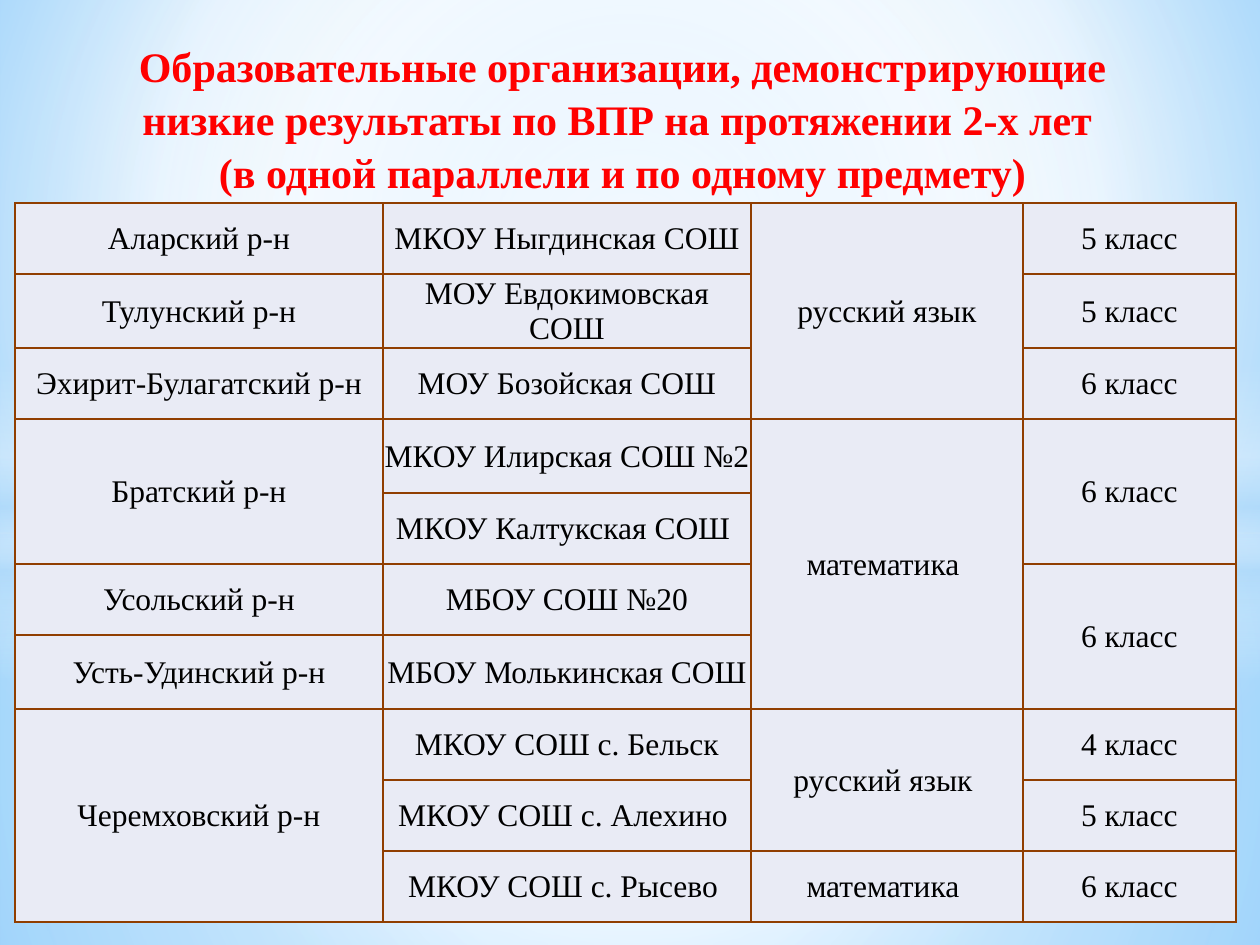
from lxml.etree import SubElement
from pptx import Presentation
from pptx.dml.color import RGBColor
from pptx.enum.shapes import MSO_SHAPE
from pptx.enum.text import MSO_ANCHOR, MSO_AUTO_SIZE, PP_ALIGN
from pptx.oxml.ns import qn
from pptx.util import Pt

PX = 914400 / 126
FONT = "Times New Roman"
RED = RGBColor(0xFF, 0x00, 0x00)
BLACK = RGBColor(0x00, 0x00, 0x00)
WHITE = RGBColor(0xFF, 0xFF, 0xFF)
CELL = RGBColor(0xE9, 0xEB, 0xF5)
BORDER = RGBColor(0x90, 0x3E, 0x00)
SKY = RGBColor(0x9E, 0xD5, 0xFF)
BLUE = RGBColor(0x5B, 0xB9, 0xFF)
PALE = RGBColor(0xB4, 0xDC, 0xFA)

CENTRE = (50, 50, 50, 50)
# Outline, box, stops (position, colour, opacity), focus (None: top to bottom)
GLOWS = [
    (MSO_SHAPE.RECTANGLE, (0, 533, 1260, 412),
     [(0, WHITE, 91), (37, WHITE, 76), (100, PALE, 79)], CENTRE),
    (MSO_SHAPE.RECTANGLE, (0, 0, 1260, 533),
     [(0, WHITE, 89), (48, WHITE, 62), (100, PALE, 79)], CENTRE),
    (MSO_SHAPE.RECTANGLE, (0, 365, 1260, 315),
     [(0, WHITE, 0), (29, WHITE, 30), (45, PALE, 40), (55, WHITE, 26),
      (65, PALE, 60), (100, WHITE, 0)], None),
    (MSO_SHAPE.OVAL, (0, 220, 1260, 703),
     [(0, WHITE, 100), (54, WHITE, 0)], CENTRE),
]

TITLE = [
    "Образовательные организации, демонстрирующие низкие результаты "
    "по ВПР на протяжении 2-х лет ",
    "(в одной параллели и по одному предмету)",
]

COLUMNS = [368, 368, 272, 213]
ROW, TALL_ROW = 71, 74
TALL_ROWS = {1, 3, 6}
# None continues the cell above
SCHOOLS = [
    ("Аларский р-н", "МКОУ Ныгдинская СОШ", "русский язык", "5 класс"),
    ("Тулунский р-н", "МОУ Евдокимовская СОШ", None, "5 класс"),
    ("Эхирит-Булагатский р-н", "МОУ Бозойская СОШ", None, "6 класс"),
    ("Братский р-н", "МКОУ Илирская СОШ №2", "математика ", "6 класс"),
    (None, "МКОУ Калтукская СОШ ", None, None),
    ("Усольский р-н", "МБОУ СОШ №20", None, "6 класс"),
    ("Усть-Удинский р-н", "МБОУ Молькинская СОШ", None, None),
    ("Черемховский р-н", "МКОУ СОШ с. Бельск", "русский язык ", "4 класс"),
    (None, "МКОУ СОШ с. Алехино ", None, "5 класс"),
    (None, "МКОУ СОШ с. Рысево ", "математика ", "6 класс"),
]


def px(length):
    return round(length * PX)


def set_gradient(properties, stops, focus):
    """Replace the solid fill in properties by a gradient."""
    solid = properties.find(qn("a:solidFill"))
    gradient = properties.makeelement(qn("a:gradFill"), {"rotWithShape": "1"})
    properties.replace(solid, gradient)
    stop_list = SubElement(gradient, qn("a:gsLst"))
    for position, colour, opacity in stops:
        stop = SubElement(stop_list, qn("a:gs"), pos=str(position * 1000))
        tint = SubElement(stop, qn("a:srgbClr"), val=str(colour))
        if opacity < 100:
            SubElement(tint, qn("a:alpha"), val=str(opacity * 1000))
    if focus is None:
        SubElement(gradient, qn("a:lin"), ang="5400000", scaled="0")
    else:
        circle = SubElement(gradient, qn("a:path"), {"path": "circle"})
        sides = {side: str(share * 1000) for side, share in zip("ltrb", focus)}
        SubElement(circle, qn("a:fillToRect"), sides)


def add_backdrop(page):
    page.background.fill.solid()
    set_gradient(page._element.find(".//" + qn("p:bgPr")),
                 [(0, SKY, 100), (60, WHITE, 100), (100, BLUE, 100)],
                 (20, 10, 20, 60))
    for outline, box, stops, focus in GLOWS:
        glow = page.shapes.add_shape(outline, *map(px, box))
        glow.shadow.inherit = False
        glow.line.fill.background()
        glow.fill.solid()
        set_gradient(glow._element.spPr, stops, focus)


def set_borders(cell):
    properties = cell._tc.get_or_add_tcPr()
    for side in ("a:lnL", "a:lnR", "a:lnT", "a:lnB"):
        line = SubElement(properties, qn(side), w=str(Pt(1)))
        fill = SubElement(line, qn("a:solidFill"))
        SubElement(fill, qn("a:srgbClr"), val=str(BORDER))


def format_cell(cell, text):
    set_borders(cell)
    cell.fill.solid()
    cell.fill.fore_color.rgb = CELL
    cell.vertical_anchor = MSO_ANCHOR.MIDDLE
    cell.margin_left = cell.margin_right = cell.margin_top = px(1)
    cell.margin_bottom = 0
    para = cell.text_frame.paragraphs[0]
    para.text = text or ""
    para.alignment = PP_ALIGN.CENTER
    para.font.name = FONT
    para.font.size = Pt(18)
    para.font.color.rgb = BLACK


def add_school_table(page, left, top):
    heights = [TALL_ROW if row in TALL_ROWS else ROW
               for row in range(len(SCHOOLS))]
    box = (left, top, sum(COLUMNS), sum(heights))
    table = page.shapes.add_table(len(SCHOOLS), len(COLUMNS),
                                  *map(px, box)).table
    table.first_row = table.horz_banding = False
    for column, width in zip(table.columns, COLUMNS):
        column.width = px(width)
    for row, height in zip(table.rows, heights):
        row.height = px(height)
    for r, school in enumerate(SCHOOLS):
        for c, text in enumerate(school):
            format_cell(table.cell(r, c), text)
    for c, entries in enumerate(zip(*SCHOOLS)):
        starts = [r for r, text in enumerate(entries) if text is not None]
        for start, end in zip(starts, starts[1:] + [len(entries)]):
            if end - start > 1:
                table.cell(start, c).merge(table.cell(end - 1, c))


def place_title(page, left, top, width, height):
    title = page.shapes.title
    title.left, title.top, title.width, title.height = map(
        px, (left, top, width, height))
    page.shapes._spTree.append(title._element)
    frame = title.text_frame
    frame.word_wrap = True
    frame.auto_size = MSO_AUTO_SIZE.NONE
    frame.vertical_anchor = MSO_ANCHOR.MIDDLE
    frame.text = "\n".join(TITLE)
    for para in frame.paragraphs:
        para.alignment = PP_ALIGN.CENTER
        para.line_spacing = 1.05
        para._p.get_or_add_pPr().set("marL", str(px(6)))
        para.font.name = FONT
        para.font.size = Pt(24)
        para.font.bold = True
        para.font.color.rgb = RED


def main():
    deck = Presentation()
    deck.slide_width, deck.slide_height = px(1260), px(945)
    page = deck.slides.add_slide(deck.slide_layouts[5])
    add_backdrop(page)
    add_school_table(page, 15, 203)
    place_title(page, 54, 35, 1131, 165)
    deck.save("out.pptx")


if __name__ == "__main__":
    main()
